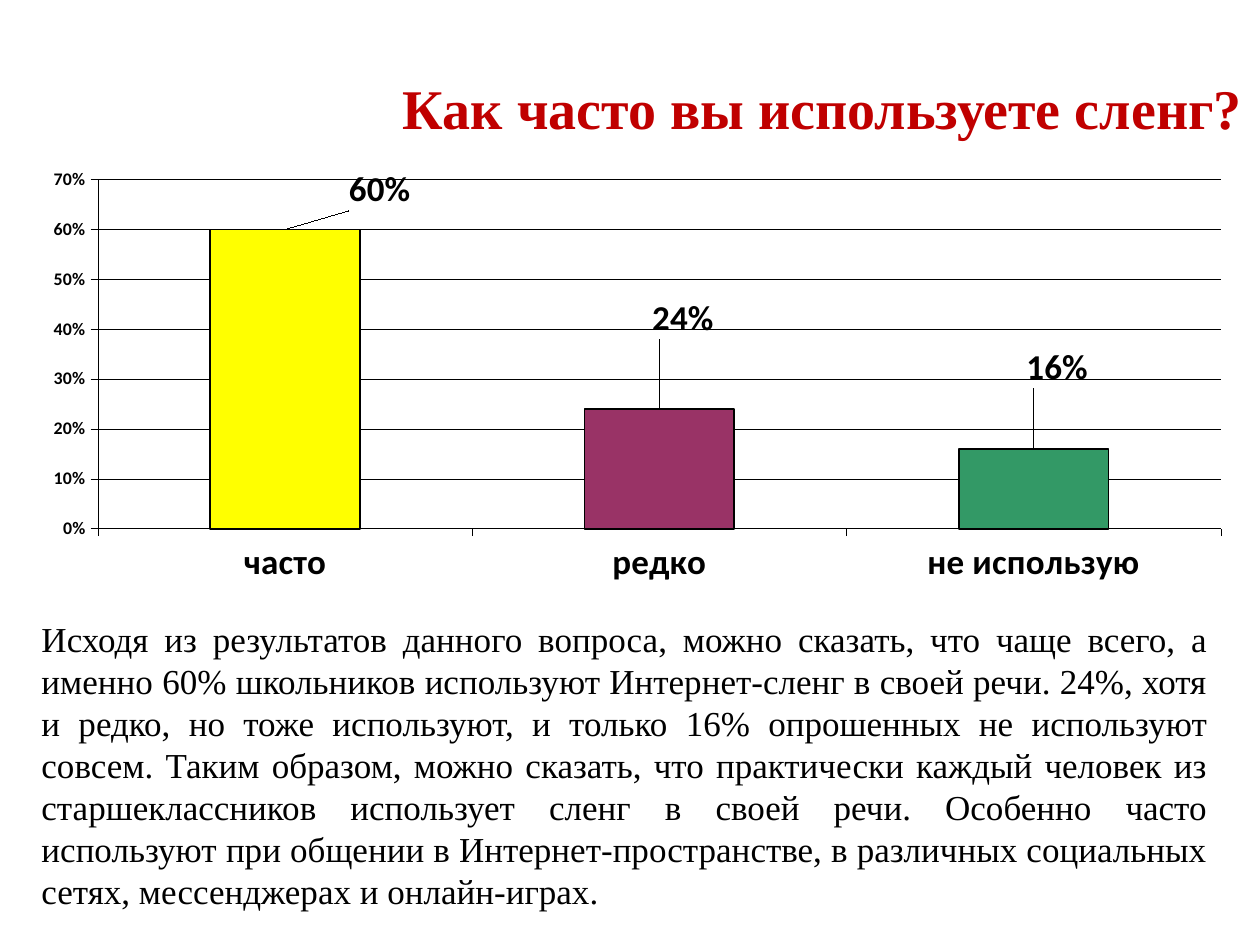
from lxml import etree
from pptx import Presentation
from pptx import util as u
from pptx.chart.data import CategoryChartData
from pptx.dml.color import RGBColor
from pptx.enum import chart as ch, text
from pptx.oxml import parse_xml
from pptx.oxml.ns import nsdecls

Pt = u.Pt
BLACK = RGBColor(0, 0, 0)
RED = RGBColor(0xC0, 0, 0)
# answer, share, bar colour, label shift as a fraction of the chart
ANSWERS = [
    ("часто", 0.6, RGBColor(0xFF, 0xFF, 0), 0.08, -0.03),
    ("редко", 0.24, RGBColor(0x99, 0x33, 0x66), 0.02, -0.14),
    ("не использую", 0.16, RGBColor(0x33, 0x99, 0x66), 0.02, -0.12),
]
CONCLUSION = (
    "Исходя из результатов данного вопроса, можно сказать, что чаще всего, "
    "а именно 60% школьников используют Интернет-сленг в своей речи. 24%, "
    "хотя и редко, но тоже используют, и только 16% опрошенных не используют "
    "совсем. Таким образом, можно сказать, что практически каждый человек из "
    "старшеклассников использует сленг в своей речи. Особенно часто используют "
    "при общении в Интернет-пространстве, в различных социальных сетях, "
    "мессенджерах и онлайн-играх."
)


def set_font(font, name, size, color=BLACK, bold=False):
    font.name = name
    font.size = Pt(size)
    font.bold = bold
    font.color.rgb = color


def manual_layout(**values):
    items = "".join(f'<c:{tag} val="{value}"/>' for tag, value in values.items())
    return parse_xml(f"<c:layout {nsdecls('c')}><c:manualLayout>{items}"
                     "</c:manualLayout></c:layout>")


presentation = Presentation()
presentation.slide_width, presentation.slide_height = Pt(720), Pt(540)
slide = presentation.slides.add_slide(presentation.slide_layouts[6])

# Chart
data = CategoryChartData(number_format="0%")
data.categories = [answer[0] for answer in ANSWERS]
data.add_series("Series 1", [answer[1] for answer in ANSWERS])
chart = slide.shapes.add_chart(ch.XL_CHART_TYPE.COLUMN_CLUSTERED, Pt(22.3), Pt(95.8),
                               Pt(675.4), Pt(264.2), data).chart
chart.has_legend = False
chart.has_title = False
set_font(chart.font, "Calibri", 9.5, bold=True)
plot = chart.plots[0]
plot.gap_width = 150
plot.vary_by_categories = False

# Plot area position
plot_area = chart.element.find(".//{*}plotArea")
for old_layout in plot_area.findall("{*}layout"):
    plot_area.remove(old_layout)
plot_area.insert(0, manual_layout(layoutTarget="inner", xMode="edge", yMode="edge",
                                  x=0.05, y=0.02, w=0.95, h=0.76))

# Axes
for axis, size in ((chart.category_axis, 20), (chart.value_axis, 10.2)):
    set_font(axis.tick_labels.font, "Calibri", size, bold=True)
    axis.major_tick_mark = ch.XL_TICK_MARK.OUTSIDE
    axis.format.line.color.rgb = BLACK
    axis.format.line.width = Pt(0.25)
chart.category_axis.tick_label_position = ch.XL_TICK_LABEL_POSITION.LOW
value_axis = chart.value_axis
value_axis.minimum_scale, value_axis.maximum_scale = 0, 0.7
value_axis.major_unit = 0.1
value_axis.tick_labels.number_format = "0%"
value_axis.tick_labels.number_format_is_linked = False
value_axis.has_major_gridlines = True
value_axis.major_gridlines.format.line.color.rgb = BLACK
value_axis.major_gridlines.format.line.width = Pt(0.25)

# Bars and their shifted labels
series = plot.series[0]
labels = series.data_labels
labels.show_value = True
labels.number_format = "0%"
labels.number_format_is_linked = False
set_font(labels.font, "Calibri", 20, bold=True)
for index, (_, _, color, shift_x, shift_y) in enumerate(ANSWERS):
    point = series.points[index]
    point.format.fill.solid()
    point.format.fill.fore_color.rgb = color
    point.format.line.color.rgb = BLACK
    point.format.line.width = Pt(1)
    set_font(point.data_label.font, "Calibri", 20, bold=True)
    point.data_label.position = ch.XL_LABEL_POSITION.OUTSIDE_END
for label, answer in zip(chart.element.iterfind(".//{*}dLbl"), ANSWERS):
    label.insert(1, manual_layout(x=answer[3], y=answer[4]))

# Title and conclusion
TEXTS = [
    ("Как часто вы используете сленг?", (140.4, 43.2, 576.7, 79.9), 32, RED, True,
     text.PP_ALIGN.RIGHT, text.MSO_ANCHOR.TOP, 0.89),
    (CONCLUSION, (16.6, 348.5, 680.4, 177.1), 20, BLACK, False,
     text.PP_ALIGN.JUSTIFY, text.MSO_ANCHOR.MIDDLE, 1),
]
for words, box, size, color, bold, alignment, anchor, spacing in TEXTS:
    frame = slide.shapes.add_textbox(*map(Pt, box)).text_frame
    frame.word_wrap = True
    frame.vertical_anchor = anchor
    frame.text = words
    paragraph = frame.paragraphs[0]
    paragraph.alignment = alignment
    paragraph.line_spacing = spacing
    set_font(paragraph.runs[0].font, "Times New Roman", size, color, bold)

presentation.save("out.pptx")
